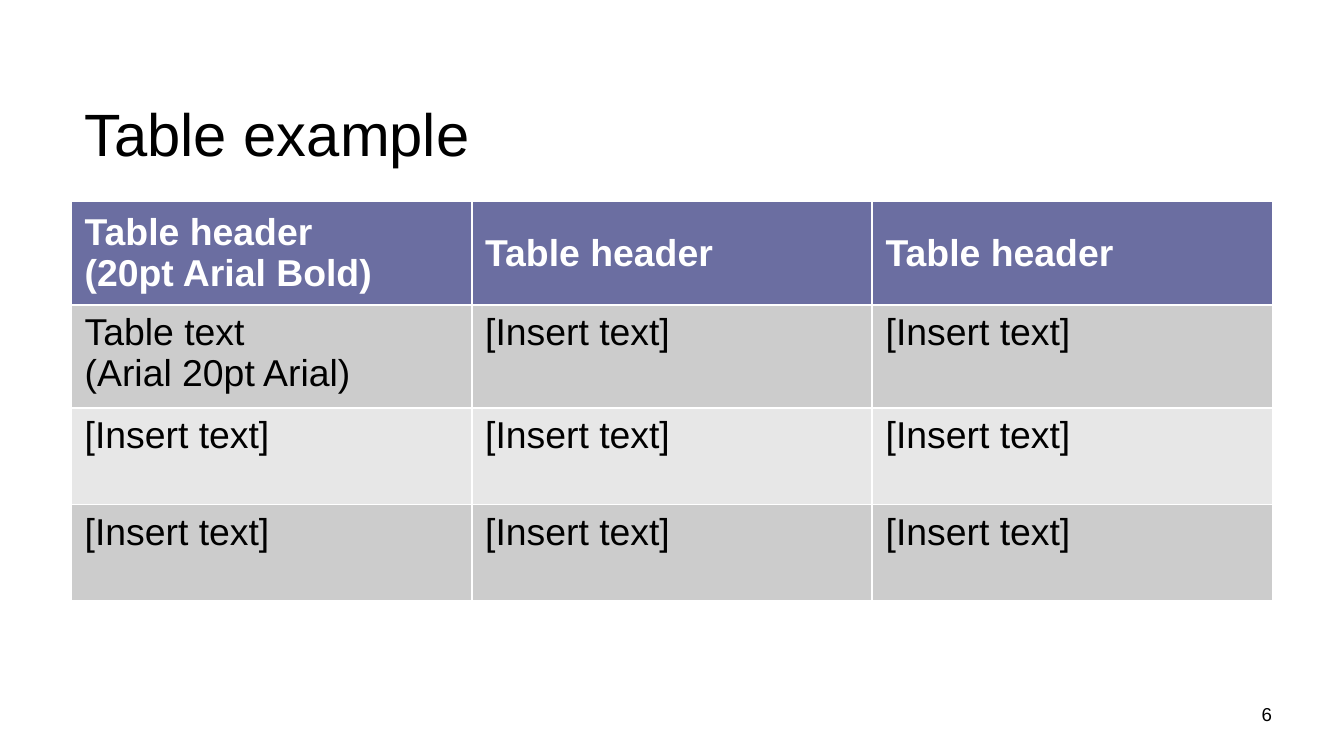
from dataclasses import dataclass

import pptx
import pptx.dml.color
import pptx.enum.text
import pptx.util
from pptx.util import Inches

Color = pptx.dml.color.RGBColor
Anchor = pptx.enum.text.MSO_ANCHOR
Align = pptx.enum.text.PP_ALIGN


@dataclass(frozen=True)
class Theme:
    font: str = "Arial"
    ink: str = "000000"
    paper: str = "FFFFFF"
    header_fill: str = "6B6EA1"
    bands: tuple[str, str] = ("CCCCCC", "E7E7E7")
    title_size: int = 32
    table_size: int = 20
    number_size: int = 10


@dataclass(frozen=True)
class TableRow:
    texts: tuple[str, str, str]
    fill: str
    header: bool = False


THEME = Theme()
INSERT = "[Insert text]"
ROWS = (
    TableRow(
        ("Table header\n(20pt Arial Bold)", "Table header", "Table header"),
        THEME.header_fill,
        header=True,
    ),
    TableRow(("Table text\n(Arial 20pt Arial)", INSERT, INSERT), THEME.bands[0]),
    TableRow((INSERT,) * 3, THEME.bands[1]),
    TableRow((INSERT,) * 3, THEME.bands[0]),
)
SLIDE_WIDTH = 10
SLIDE_HEIGHT = SLIDE_WIDTH * 9 / 16
LEFT, WIDTH = 0.53, 8.94
TABLE_TOP, ROW_HEIGHT = 1.5, 0.72


def write_text(frame, text: str, *, size: int, color: str = THEME.ink,
               bold: bool = False, align=Align.LEFT,
               spacing: float = 1.0) -> None:
    para = frame.paragraphs[0]
    para.text = text.replace("\n", "\v")
    para.alignment = align
    para.line_spacing = spacing
    for span in para.runs:
        span.font.name = THEME.font
        span.font.size = pptx.util.Pt(size)
        span.font.bold = bold
        span.font.color.rgb = Color.from_string(color)


def add_label(page, left: float, top: float, width: float, height: float,
              text: str, **style) -> None:
    box = page.shapes.add_textbox(
        Inches(left), Inches(top), Inches(width), Inches(height))
    box.text_frame.word_wrap = True
    box.text_frame.vertical_anchor = Anchor.MIDDLE
    write_text(box.text_frame, text, **style)


def add_grid(page, rows: tuple[TableRow, ...]) -> None:
    table = page.shapes.add_table(
        len(rows), len(rows[0].texts), Inches(LEFT), Inches(TABLE_TOP),
        Inches(WIDTH), Inches(ROW_HEIGHT * len(rows))).table
    for row_index, row in enumerate(rows):
        for column_index, text in enumerate(row.texts):
            cell = table.cell(row_index, column_index)
            cell.fill.solid()
            cell.fill.fore_color.rgb = Color.from_string(row.fill)
            cell.vertical_anchor = Anchor.MIDDLE if row.header else Anchor.TOP
            write_text(cell.text_frame, text, size=THEME.table_size,
                       color=THEME.paper if row.header else THEME.ink,
                       bold=row.header)


def main() -> None:
    deck = pptx.Presentation()
    deck.slide_width = Inches(SLIDE_WIDTH)
    deck.slide_height = Inches(SLIDE_HEIGHT)
    page = deck.slides.add_slide(deck.slide_layouts[6])
    add_label(page, LEFT, 0.65, WIDTH, 0.74, "Table example",
              size=THEME.title_size, spacing=0.9)
    add_grid(page, ROWS)
    add_label(page, 9.19, 5.16, 0.47, 0.3, "6",
              size=THEME.number_size, align=Align.CENTER)
    deck.save("out.pptx")


if __name__ == "__main__":
    main()
